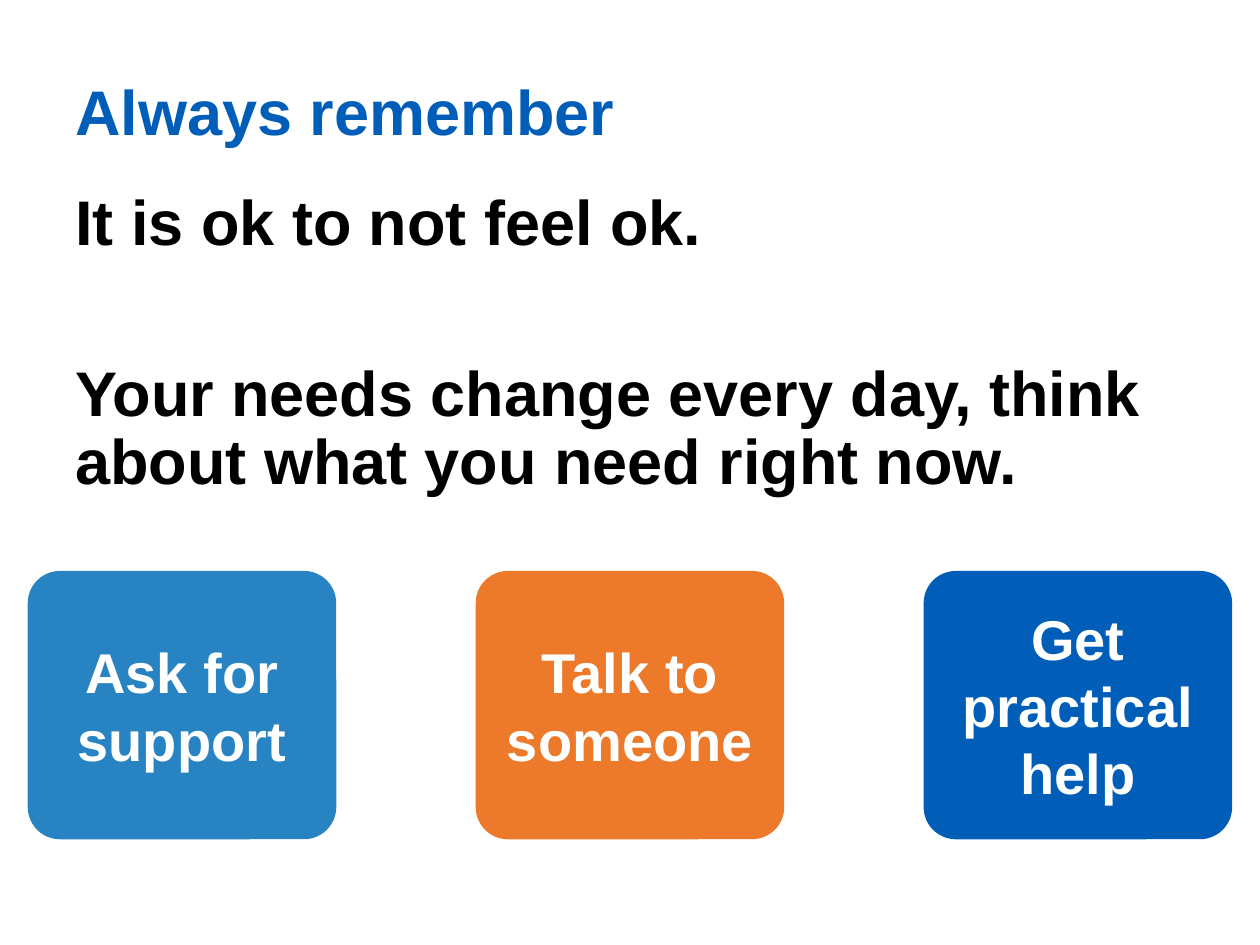
import pptx
import pptx.dml.color
import pptx.enum.shapes
import pptx.enum.text
import pptx.util

Cm = pptx.util.Cm
Pt = pptx.util.Pt
ALIGN = pptx.enum.text.PP_ALIGN
ANCHOR = pptx.enum.text.MSO_ANCHOR
COLOURS = {
    "black": "000000",
    "white": "FFFFFF",
    "sky": "2883C2",
    "orange": "ED792B",
    "blue": "005EB8",
}


def rgb(name):
    return pptx.dml.color.RGBColor.from_string(COLOURS[name])


def write_text(shape, *texts, size=36, colour="black", align=ALIGN.LEFT,
               anchor=ANCHOR.TOP, line_spacing=0.9, gap=0):
    """Write one paragraph per text, with gap points between paragraphs."""
    frame = shape.text_frame
    frame.word_wrap = True
    frame.vertical_anchor = anchor
    for index, text in enumerate(texts):
        paragraph = frame.add_paragraph() if index else frame.paragraphs[0]
        paragraph.text = text
        paragraph.alignment = align
        paragraph.line_spacing = line_spacing
        if index:
            paragraph.space_before = Pt(gap)
        paragraph.font.name = "Arial"
        paragraph.font.size = Pt(size)
        paragraph.font.bold = True
        paragraph.font.color.rgb = rgb(colour)


presentation = pptx.Presentation()
presentation.slide_width = Cm(25.4)
presentation.slide_height = Cm(19.05)
slide = presentation.slides.add_slide(presentation.slide_layouts[6])

message = slide.shapes.add_textbox(Cm(1.27), Cm(3.73), Cm(23.55), Cm(6.22))
write_text(message, "It is ok to not feel ok.",
           "Your needs change every day, think about what you need right now.",
           gap=58.5)

title = slide.shapes.add_textbox(Cm(1.27), Cm(1.52), Cm(18.24), Cm(1.7))
write_text(title, "Always remember", colour="blue")

cards = [
    ("Ask for support", "sky"),
    ("Talk to someone", "orange"),
    ("Get practical help", "blue"),
]
card_left, card_pitch = 0.56, 9.03
for index, (label, colour) in enumerate(cards):
    card = slide.shapes.add_shape(
        pptx.enum.shapes.MSO_SHAPE.ROUNDED_RECTANGLE,
        Cm(card_left + index * card_pitch), Cm(11.51), Cm(6.22), Cm(5.41))
    card.adjustments[0] = 0.12
    card.shadow.inherit = False
    card.fill.solid()
    card.fill.fore_color.rgb = rgb(colour)
    card.line.fill.background()
    write_text(card, label, size=32, colour="white", align=ALIGN.CENTER,
               anchor=ANCHOR.MIDDLE, line_spacing=1.0)

presentation.save("out.pptx")
